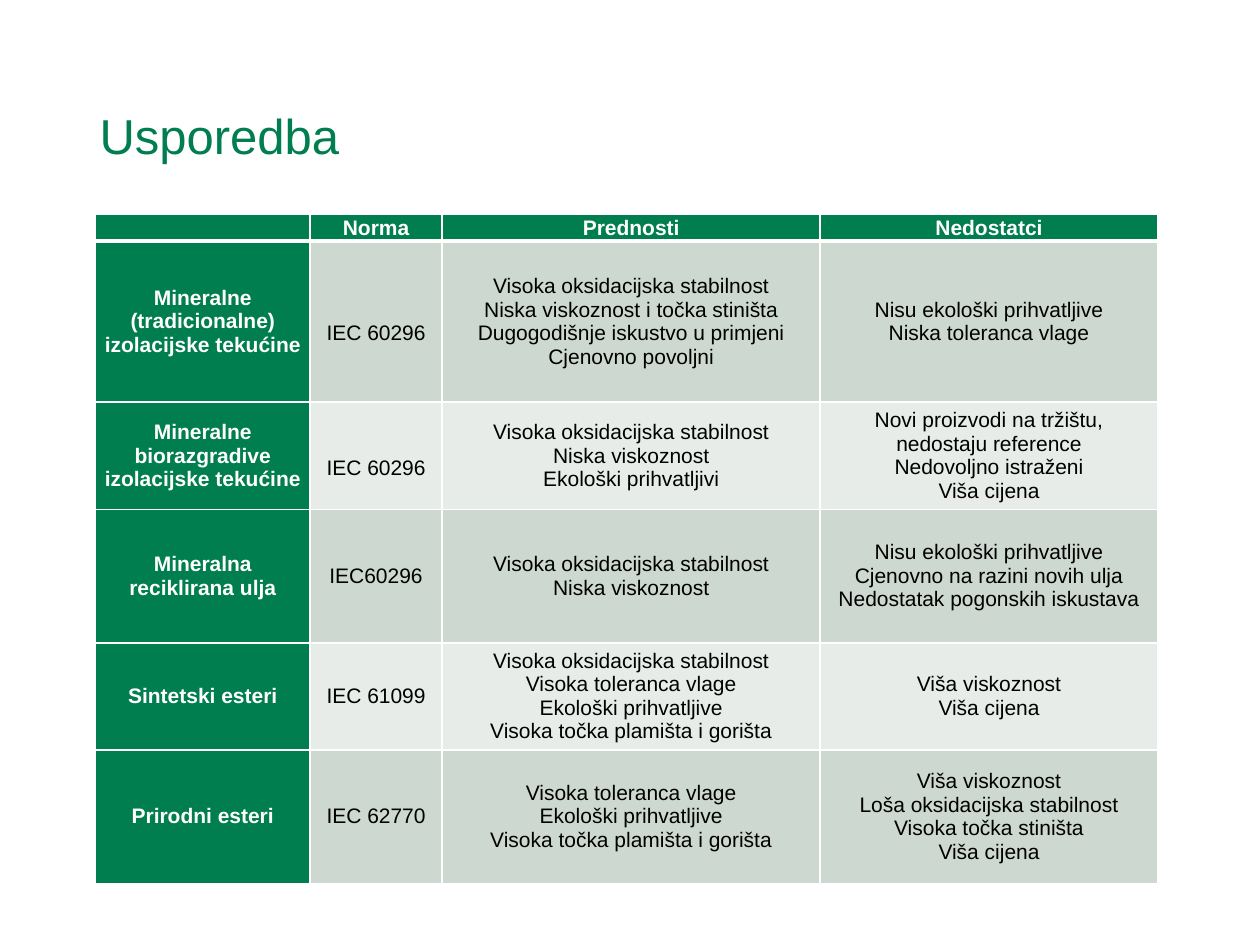
from lxml import etree
from pptx import Presentation
from pptx.dml.color import RGBColor
from pptx.enum.text import MSO_ANCHOR, PP_ALIGN
from pptx.oxml.ns import qn
from pptx.util import Inches, Pt

MID, LEFT, CENTER = MSO_ANCHOR.MIDDLE, PP_ALIGN.LEFT, PP_ALIGN.CENTER
FONT = "Arial"
HEX = {"green": "007E4F", "dark": "CCD8D0", "pale": "E7ECE9",
       "white": "FFFFFF", "black": "000000"}
WIDE, HIGH = 10, 7.5
COLS = [1.7, 1.05, 3, 2.68]
ROWS = [0.21, 1.28, 0.85, 1.06, 0.85, 1.06]
LINE = 0.19
LOWER = {(1, 1), (2, 1)}
DATA = [
    ["", "Norma", "Prednosti", "Nedostatci"],
    ["Mineralne (tradicionalne) izolacijske tekućine", "IEC 60296",
     "Visoka oksidacijska stabilnost\nNiska viskoznost i točka stiništa\n"
     "Dugogodišnje iskustvo u primjeni\nCjenovno povoljni",
     "Nisu ekološki prihvatljive\nNiska toleranca vlage"],
    ["Mineralne biorazgradive izolacijske tekućine", "IEC 60296",
     "Visoka oksidacijska stabilnost\nNiska viskoznost\nEkološki prihvatljivi",
     "Novi proizvodi na tržištu, nedostaju reference\n"
     "Nedovoljno istraženi\nViša cijena"],
    ["Mineralna reciklirana ulja", "IEC60296",
     "Visoka oksidacijska stabilnost\nNiska viskoznost",
     "Nisu ekološki prihvatljive\nCjenovno na razini novih ulja\n"
     "Nedostatak pogonskih iskustava"],
    ["Sintetski esteri", "IEC 61099",
     "Visoka oksidacijska stabilnost\nVisoka toleranca vlage\n"
     "Ekološki prihvatljive\nVisoka točka plamišta i gorišta",
     "Viša viskoznost\nViša cijena"],
    ["Prirodni esteri", "IEC 62770",
     "Visoka toleranca vlage\nEkološki prihvatljive\n"
     "Visoka točka plamišta i gorišta",
     "Viša viskoznost\nLoša oksidacijska stabilnost\n"
     "Visoka točka stiništa\nViša cijena"],
]


def scale(x, y, w, h):
    """Turn shares of the slide into lengths."""
    return Inches(x * WIDE), Inches(y * HIGH), Inches(w * WIDE), Inches(h * HIGH)


def write(para, text, size, color, bold=False):
    """Add one styled run to a paragraph."""
    run = para.add_run()
    run.text = text
    font = run.font
    font.name, font.size, font.bold = FONT, Pt(size), bold
    font.color.rgb = RGBColor.from_string(HEX[color])


def edge(cell, side, width):
    """Draw one white side of a cell."""
    line = etree.Element(qn("a:ln" + side), w=str(Pt(width)))
    fill = etree.SubElement(line, qn("a:solidFill"))
    etree.SubElement(fill, qn("a:srgbClr"), val=HEX["white"])
    cell._tc.get_or_add_tcPr().insert("LRTB".index(side), line)


def fill_cell(cell, text, row, col):
    """Style one cell and write its lines."""
    head = row == 0 or col == 0
    cell.vertical_anchor = MID
    cell.margin_left = cell.margin_right = Inches(0.07)
    cell.margin_top = Inches(LINE if (row, col) in LOWER else 0)
    cell.margin_bottom = 0
    for side in "LRTB":
        thick = (row, side) in ((0, "B"), (1, "T"))
        edge(cell, side, 3 if thick else 1)
    tone = "green" if head else ("dark" if row % 2 else "pale")
    cell.fill.solid()
    cell.fill.fore_color.rgb = RGBColor.from_string(HEX[tone])
    frame = cell.text_frame
    if not text:
        etree.SubElement(frame.paragraphs[0]._p, qn("a:endParaRPr"), sz="1200")
        return
    for i, part in enumerate(text.split("\n")):
        para = frame.add_paragraph() if i else frame.paragraphs[0]
        para.alignment = CENTER
        write(para, part, 12, "white" if head else "black", head)


def add_title(slide, box):
    """Place the slide title in its box."""
    title = slide.shapes.title
    title.left, title.top, title.width, title.height = box
    frame = title.text_frame
    frame.vertical_anchor = MID
    para = frame.paragraphs[0]
    para.alignment, para.line_spacing = LEFT, 0.9
    write(para, "Usporedba", 28, "green")


def add_grid(slide, box):
    """Place the comparison table in its box."""
    table = slide.shapes.add_table(len(ROWS), len(COLS), *box).table
    table.horz_banding = False
    for col, part in zip(table.columns, COLS):
        col.width = int(box[2] * part / sum(COLS))
    for row, part in zip(table.rows, ROWS):
        row.height = int(box[3] * part / sum(ROWS))
    for r, line in enumerate(DATA):
        for c, text in enumerate(line):
            fill_cell(table.cell(r, c), text, r, c)


def main():
    """Build and save the slide."""
    deck = Presentation()
    deck.slide_width, deck.slide_height = Inches(WIDE), Inches(HIGH)
    slide = deck.slides.add_slide(deck.slide_layouts[5])
    add_title(slide, scale(0.069, 0.092, 0.862, 0.11))
    add_grid(slide, scale(0.076, 0.227, 0.843, 0.708))
    deck.save("out.pptx")


if __name__ == "__main__":
    main()
